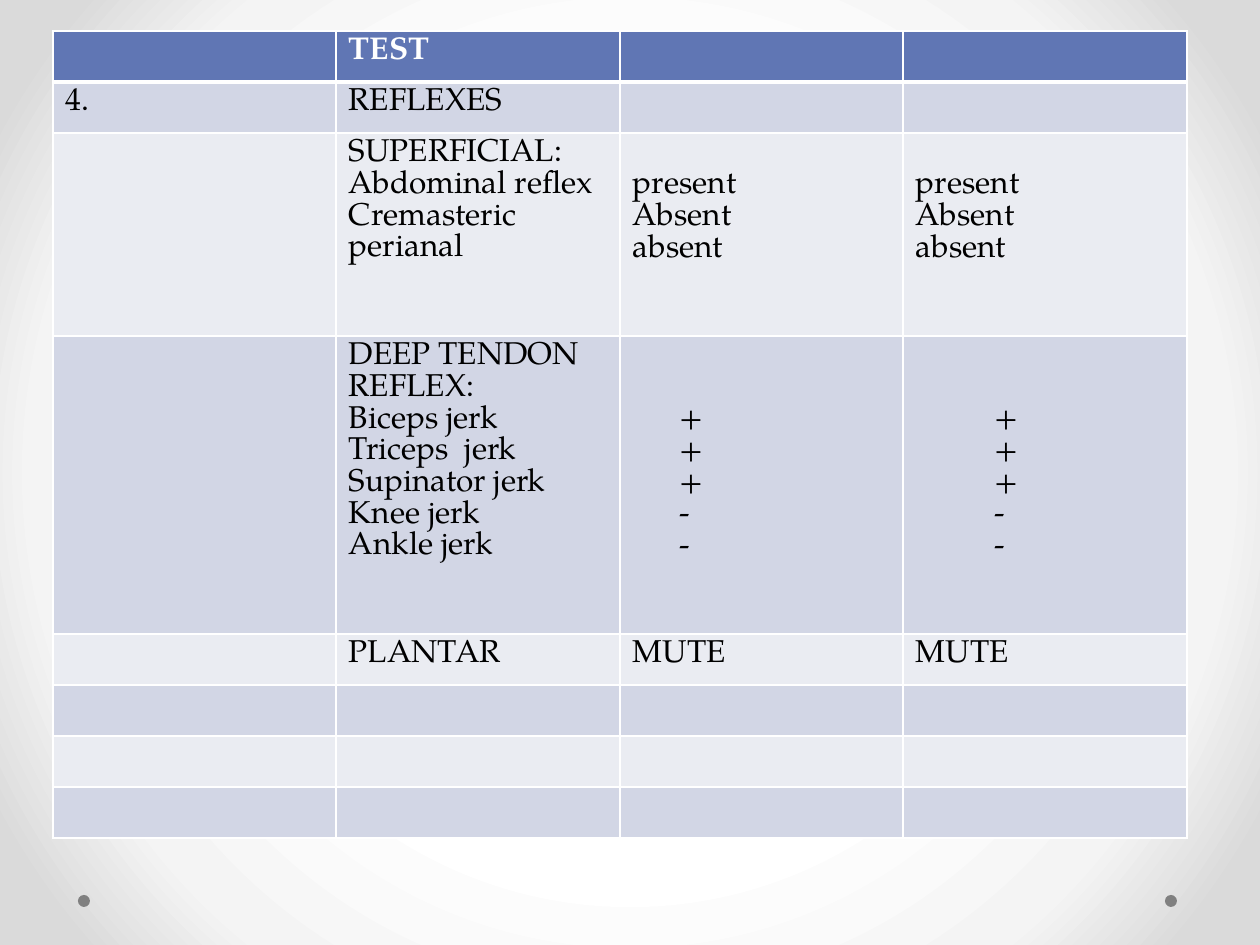
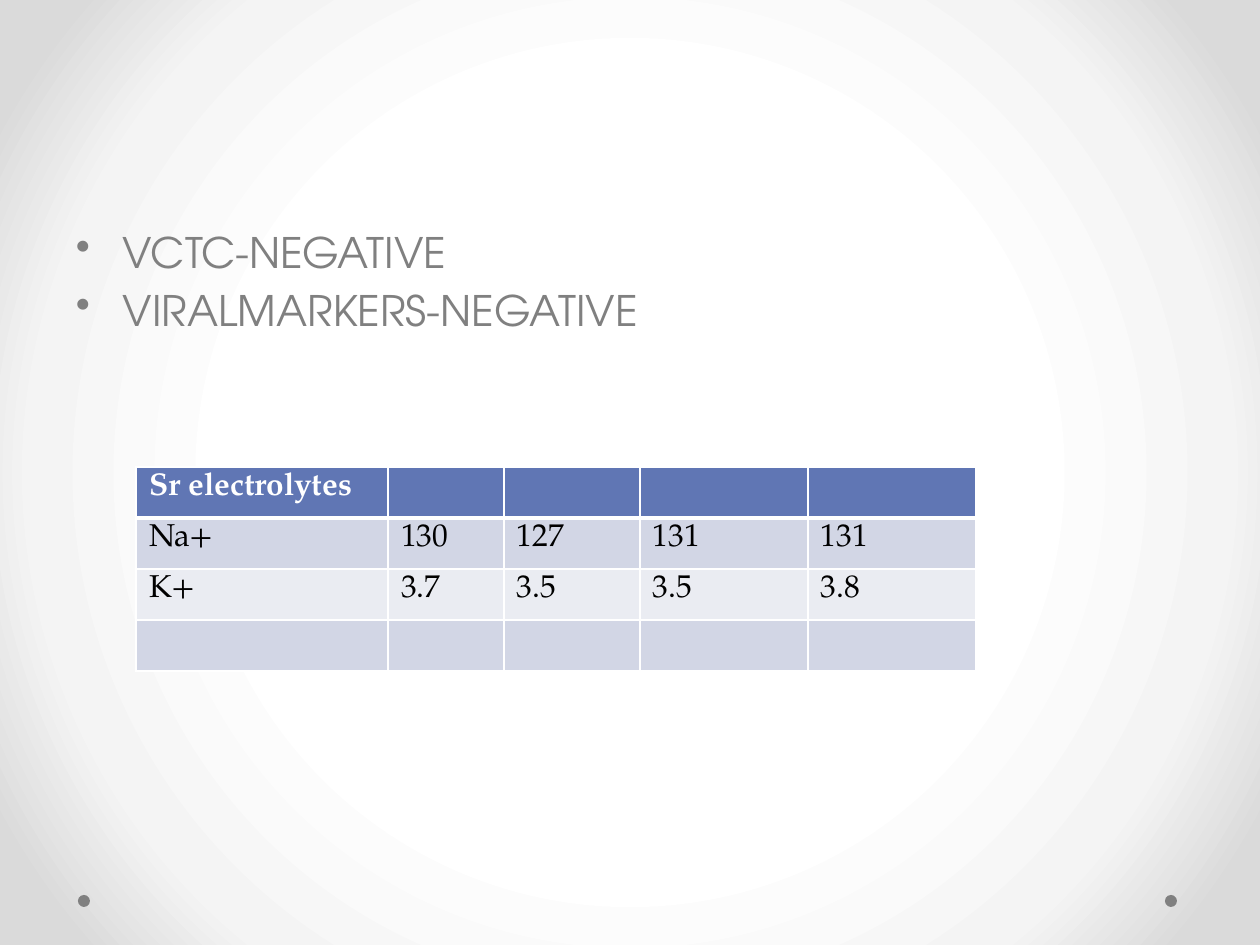
"""Build two clinical findings slides: a reflex table and a serum electrolyte table."""
from dataclasses import dataclass

from lxml import etree
from pptx import Presentation
from pptx.dml.color import RGBColor
from pptx.enum.shapes import MSO_SHAPE
from pptx.oxml import parse_xml
from pptx.oxml.ns import nsdecls, qn
from pptx.util import Emu, Pt

OVAL = MSO_SHAPE.OVAL
PX_PER_INCH = 126
BLANK_LAYOUT = 6


def px(n):
    return Emu(round(n * 914400 / PX_PER_INCH))


@dataclass(frozen=True)
class Theme:
    grey: str = "808080"
    white: str = "FFFFFF"
    black: str = "000000"
    header: str = "6076B4"
    bands: tuple = ("D2D6E5", "EAECF2")
    glow: tuple = ((50, "FFFFFF"), (76, "F4F4F4"), (92, "DADADA"))
    body_font: str = "TeX Gyre Adventor"
    table_font: str = "TeX Gyre Pagella"
    body_size: int = 24
    table_size: int = 18
    rule: int = 1
    header_rule: int = 3
    inset_x: int = 13
    inset_y: int = 6
    row: int = 51
    line: int = 32


class Deck:
    def __init__(self, theme):
        self.theme = theme
        self.prs = Presentation()
        self.prs.slide_width, self.prs.slide_height = px(1260), px(945)
        self.s = None

    def slide(self):
        self.s = self.prs.slides.add_slide(self.prs.slide_layouts[BLANK_LAYOUT])
        self.background()
        for x in (1165, 78):
            self.dot(x, 895)

    def background(self):
        stops = "".join(
            f'<a:gs pos="{pos * 1000}"><a:srgbClr val="{color}"/></a:gs>'
            for pos, color in self.theme.glow)
        self.s.element.cSld.insert(0, parse_xml(
            f'<p:bg {nsdecls("p", "a")}><p:bgPr><a:gradFill rotWithShape="1">'
            f'<a:gsLst>{stops}</a:gsLst><a:path path="circle">'
            '<a:fillToRect l="50000" t="50000" r="50000" b="50000"/></a:path>'
            '</a:gradFill><a:effectLst/></p:bgPr></p:bg>'))

    def dot(self, x, y, size=12):
        sp = self.s.shapes.add_shape(OVAL, px(x), px(y), px(size), px(size))
        sp.shadow.inherit = False
        sp.fill.solid()
        sp.fill.fore_color.rgb = RGBColor.from_string(self.theme.grey)
        sp.line.fill.background()

    def run(self, p, text, font, size, color, bold=False):
        r = p.add_run()
        r.text = text
        r.font.name, r.font.size, r.font.bold = font, Pt(size), bold
        r.font.color.rgb = RGBColor.from_string(color)

    def insets(self, box, left=0, top=0):
        t = self.theme
        box.margin_left, box.margin_right = px(t.inset_x + left), px(t.inset_x)
        box.margin_top, box.margin_bottom = px(t.inset_y + top), px(t.inset_y)

    def bullets(self, x, y, w, h, items, indent=47):
        t = self.theme
        tf = self.s.shapes.add_textbox(px(x), px(y), px(w), px(h)).text_frame
        tf.word_wrap = True
        self.insets(tf)
        for i, text in enumerate(items):
            p = tf.add_paragraph() if i else tf.paragraphs[0]
            pPr = p._p.get_or_add_pPr()
            pPr.set("marL", str(px(indent)))
            pPr.set("indent", str(-px(indent)))
            etree.SubElement(pPr, qn("a:buChar"), char="•")
            if i:
                p.space_before = Pt(t.body_size * 0.2)
            self.run(p, text, t.body_font, t.body_size, t.grey)

    def borders(self, cell, top, bottom):
        t = self.theme
        tcPr = cell._tc.get_or_add_tcPr()
        for side, width in (("L", t.rule), ("R", t.rule), ("T", top), ("B", bottom)):
            ln = etree.SubElement(tcPr, qn(f"a:ln{side}"), w=str(Pt(width)))
            fill = etree.SubElement(ln, qn("a:solidFill"))
            etree.SubElement(fill, qn("a:srgbClr"), val=t.white)

    def cell(self, cell, row, lines, left=0, skip=0):
        t = self.theme
        head = row == 0
        self.borders(cell, t.header_rule if row == 1 else t.rule,
                     t.header_rule if head else t.rule)
        cell.fill.solid()
        cell.fill.fore_color.rgb = RGBColor.from_string(
            t.header if head else t.bands[(row - 1) % 2])
        self.insets(cell, left, skip * t.line)
        tf = cell.text_frame
        for i, text in enumerate(lines):
            p = tf.add_paragraph() if i else tf.paragraphs[0]
            self.run(p, text, t.table_font, t.table_size,
                     t.white if head else t.black, head)

    def table(self, x, y, widths, rows, tall=None, offsets=None):
        heights = [(tall or {}).get(i, self.theme.row) for i in range(len(rows))]
        tbl = self.s.shapes.add_table(len(rows), len(widths), px(x), px(y),
                                      px(sum(widths)), px(sum(heights))).table
        for col, w in zip(tbl.columns, widths):
            col.width = px(w)
        for i, values in enumerate(rows):
            tbl.rows[i].height = px(heights[i])
            for j in range(len(widths)):
                text = values[j] if j < len(values) else ""
                left, skip = (offsets or {}).get((i, j), (0, 0))
                self.cell(tbl.cell(i, j), i, text.split("\n") if text else [],
                          left, skip)


def main():
    deck = Deck(Theme())

    deck.slide()
    superficial = "present\nAbsent\nabsent"
    jerks = "+\n+\n+\n-\n-"
    deck.table(
        53, 31, (283, 284, 283, 284),
        [("", "TEST"),
         ("4.", "REFLEXES"),
         ("", "SUPERFICIAL:\nAbdominal reflex\nCremasteric\nperianal",
          superficial, superficial),
         ("", "DEEP TENDON REFLEX:\nBiceps jerk\nTriceps  jerk\n"
          "Supinator jerk\nKnee jerk\nAnkle jerk", jerks, jerks),
         ("", "PLANTAR", "MUTE", "MUTE"),
         (), (), ()],
        tall={2: 203, 3: 298},
        offsets={(2, 2): (0, 1), (2, 3): (0, 1),
                 (3, 2): (47, 2), (3, 3): (79, 2)})

    deck.slide()
    deck.bullets(63, 220, 1134, 624, ("VCTC-NEGATIVE", "VIRALMARKERS-NEGATIVE"))
    deck.table(
        136, 467, (252, 116, 136, 168, 168),
        [("Sr electrolytes",),
         ("Na+", "130", "127", "131", "131"),
         ("K+", "3.7", "3.5", "3.5", "3.8"),
         ()])

    deck.prs.save("out.pptx")


if __name__ == "__main__":
    main()
